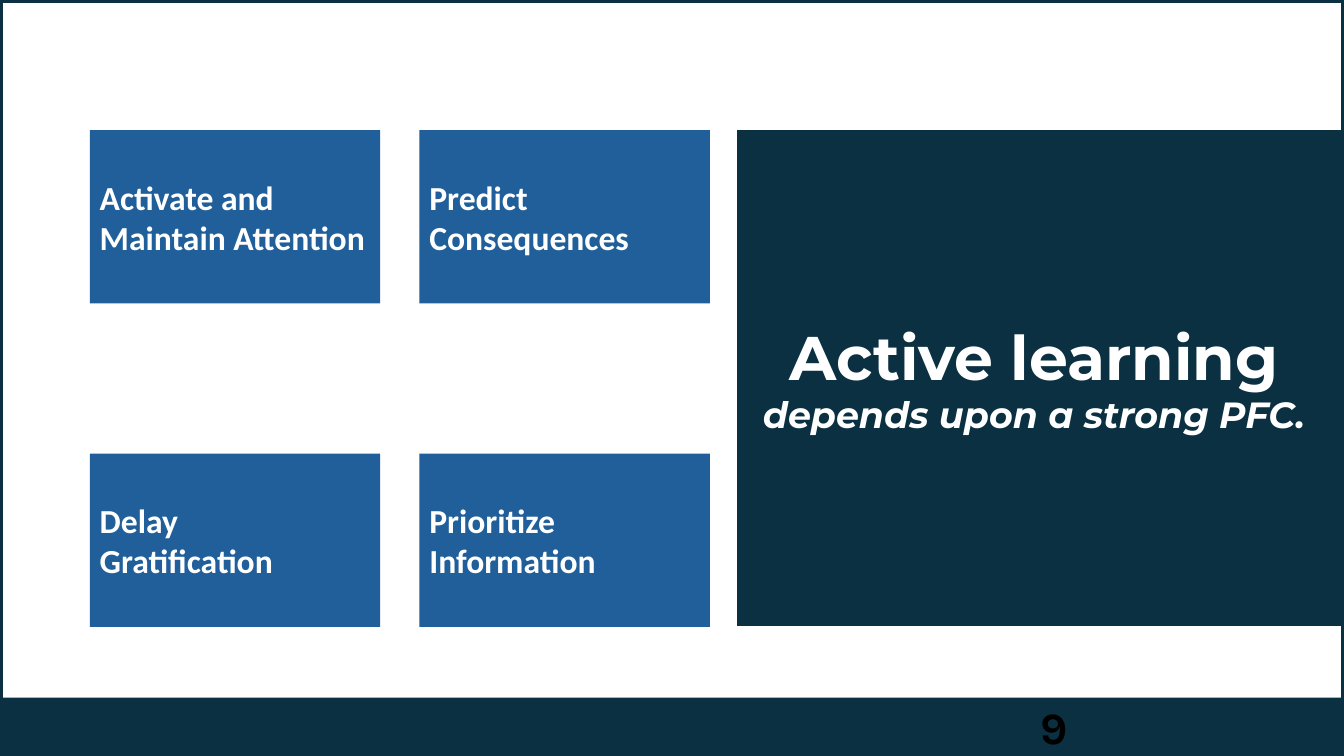
import pptx
import pptx.dml.color
import pptx.enum.shapes
import pptx.enum.text
import pptx.util

WIDTH, HEIGHT = 13.33, 7.5
NAVY, BLUE, WHITE, BLACK = "0B3041", "215F9A", "FFFFFF", "000000"
ALIGN = pptx.enum.text.PP_ALIGN
ANCHOR = pptx.enum.text.MSO_ANCHOR

CARD_LEFT, CARD_TOP = 0.89, 1.29
CARD_WIDTH, CARD_HEIGHT = 2.88, 1.72
COLUMN_STEP, ROW_STEP = 3.27, 3.21
CARDS = [
    [["Activate and Maintain Attention"], ["Predict Consequences"]],
    [["Delay", "Gratification"], ["Prioritize Information"]],
]


def color(value):
    return pptx.dml.color.RGBColor.from_string(value)


class SlideBuilder:
    def __init__(self, slide):
        self.slide = slide

    def place(self, left, top, width, height):
        shares = (left / WIDTH, top / HEIGHT, width / WIDTH, height / HEIGHT)
        sides = (WIDTH, HEIGHT, WIDTH, HEIGHT)
        return [pptx.util.Inches(share * side) for share, side in zip(shares, sides)]

    def rectangle(self, area, fill=None, line=None, weight=0):
        shape = self.slide.shapes.add_shape(
            pptx.enum.shapes.MSO_SHAPE.RECTANGLE, *self.place(*area))
        shape.shadow.inherit = False
        if fill:
            shape.fill.solid()
            shape.fill.fore_color.rgb = color(fill)
        else:
            shape.fill.background()
        if line:
            shape.line.color.rgb = color(line)
            shape.line.width = pptx.util.Pt(weight)
        else:
            shape.line.fill.background()
        return shape

    def fill_text(self, shape, lines, sizes, font, ink, align, anchor):
        frame = shape.text_frame
        frame.word_wrap = True
        frame.vertical_anchor = anchor
        frame.text = "\n".join(lines)
        for paragraph, size in zip(frame.paragraphs, sizes):
            paragraph.alignment = align
            for run in paragraph.runs:
                run.font.name = font
                run.font.size = pptx.util.Pt(size)
                run.font.bold = True
                run.font.color.rgb = color(ink)
        return frame

    def text(self, area, lines, sizes, font, ink, align, anchor):
        box = self.slide.shapes.add_textbox(*self.place(*area))
        return self.fill_text(box, lines, sizes, font, ink, align, anchor)

    def card(self, column, row, lines):
        area = (CARD_LEFT + column * COLUMN_STEP, CARD_TOP + row * ROW_STEP,
                CARD_WIDTH, CARD_HEIGHT)
        self.fill_text(self.rectangle(area, fill=BLUE), lines, [24] * len(lines),
                       "Calibri", WHITE, ALIGN.LEFT, ANCHOR.MIDDLE)


def main():
    presentation = pptx.Presentation()
    presentation.slide_width = pptx.util.Inches(WIDTH)
    presentation.slide_height = pptx.util.Inches(HEIGHT)
    builder = SlideBuilder(presentation.slides.add_slide(presentation.slide_layouts[6]))

    builder.rectangle((0, 6.92, WIDTH, 0.58), fill=NAVY)
    builder.rectangle((0, 0, WIDTH, HEIGHT), line=NAVY, weight=4.5)
    builder.rectangle((7.31, CARD_TOP, 6.02, 4.92), fill=NAVY)
    message = builder.text(
        (7.3, 3.11, 5.92, 1.28), ["Active learning", "depends upon a strong PFC."],
        [44, 26], "Montserrat", WHITE, ALIGN.CENTER, ANCHOR.TOP)
    message.paragraphs[1].runs[0].font.italic = True
    builder.text((10.22, 7.01, 3, 0.4), ["9"], [32], "Karla", BLACK,
                 ALIGN.LEFT, ANCHOR.MIDDLE)

    for row, cards in enumerate(CARDS):
        for column, lines in enumerate(cards):
            builder.card(column, row, lines)

    presentation.save("out.pptx")


if __name__ == "__main__":
    main()
